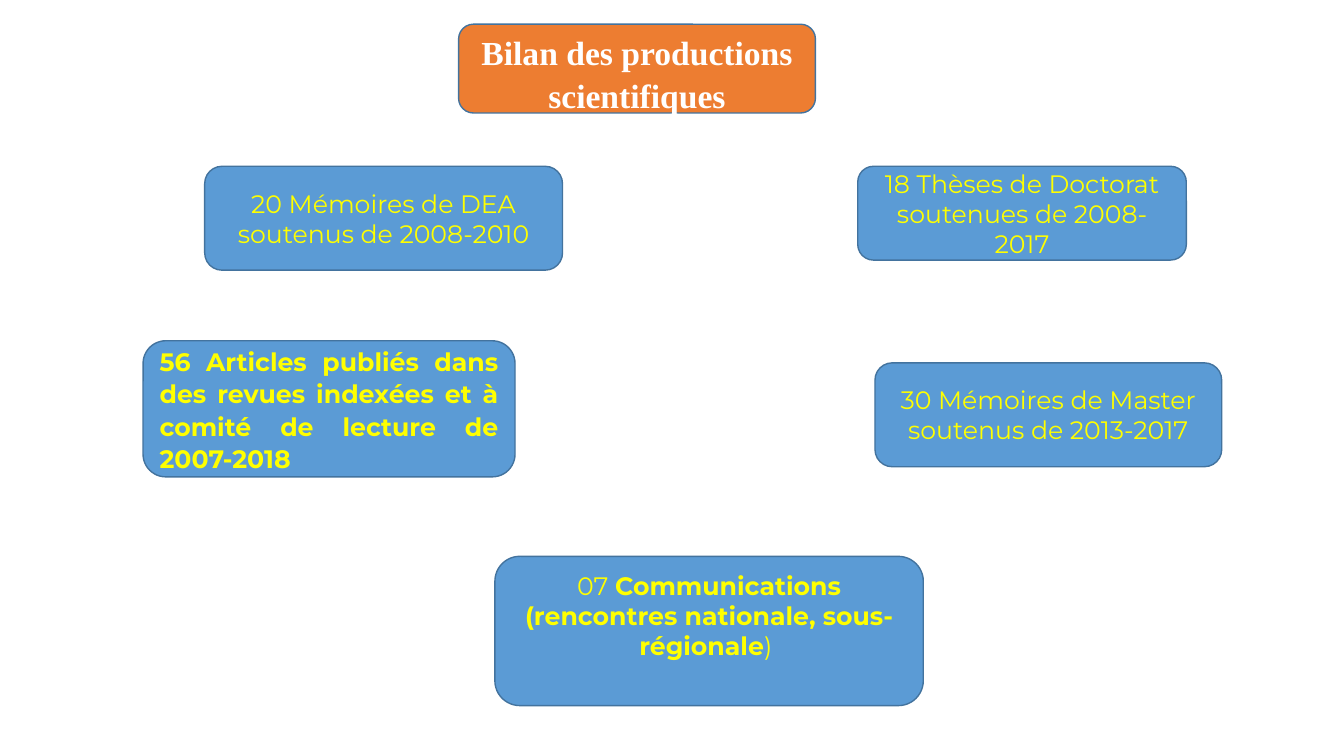
from pptx import Presentation
from pptx.dml.color import RGBColor
from pptx.enum.shapes import MSO_SHAPE
from pptx.enum.text import MSO_ANCHOR, PP_ALIGN
from pptx.util import Pt

BLUE = RGBColor(0x5B, 0x9B, 0xD5)
ORANGE = RGBColor(0xED, 0x7D, 0x31)
OUTLINE = RGBColor(0x43, 0x73, 0x9E)
YELLOW = RGBColor(0xFF, 0xFF, 0x00)
WHITE = RGBColor(0xFF, 0xFF, 0xFF)

# Box (left, top, width, height in points) and text runs (text, bold)
CENTRED_RESULTS = [
    ((146.2, 118.8, 255.6, 74.2),
     [("20 Mémoires de DEA soutenus de 2008-2010", False)]),
    ((625, 259.2, 247.7, 74.2),
     [("30 Mémoires de Master soutenus de 2013-2017", False)]),
    ((612.7, 118.8, 234.7, 67),
     [("18 Thèses de Doctorat soutenues de 2008-2017", False)]),
]
ARTICLES = [("56 Articles publiés dans des revues indexées et à comité "
             "de lecture de 2007-2018", True)]
COMMUNICATIONS = [("07 ", False),
                  ("Communications (rencontres nationale, sous-régionale", True),
                  (") ", False)]
TITLE = [("Bilan des productions scientifiques", True)]


def add_card(slide, box, runs, fill=BLUE, color=YELLOW, font="Montserrat",
             size=18, align=PP_ALIGN.CENTER):
    """Add a rounded box holding one paragraph and return its text frame."""
    s = slide.shapes.add_shape(MSO_SHAPE.ROUNDED_RECTANGLE, *map(Pt, box))
    s.shadow.inherit = False
    s.fill.solid()
    s.fill.fore_color.rgb = fill
    s.line.color.rgb = OUTLINE
    s.line.width = Pt(1)
    tf = s.text_frame
    tf.word_wrap = True
    tf.vertical_anchor = MSO_ANCHOR.MIDDLE
    p = tf.paragraphs[0]
    p.alignment = align
    for text, bold in runs:
        r = p.add_run()
        r.text = text
        r.font.name = font
        r.font.size = Pt(size)
        r.font.bold = bold
        r.font.color.rgb = color
    return tf


def add_title(slide, box):
    tf = add_card(slide, box, TITLE, ORANGE, WHITE, "Times New Roman", 24)
    tf.paragraphs[0].line_spacing = 1.07
    tf.margin_top = Pt(8.6)


def add_results(slide):
    tf = add_card(slide, (102.2, 243.4, 265.7, 97.2), ARTICLES,
                  align=PP_ALIGN.JUSTIFY)
    tf.paragraphs[0].line_spacing = 1.07
    for box, runs in CENTRED_RESULTS:
        add_card(slide, box, runs)
    tf = add_card(slide, (353.5, 397.4, 306, 106.6), COMMUNICATIONS)
    tf.margin_bottom = Pt(25.6)


def main():
    prs = Presentation()
    prs.slide_width, prs.slide_height = Pt(960), Pt(540)
    slide = prs.slides.add_slide(prs.slide_layouts[6])
    add_results(slide)
    add_title(slide, (327.6, 17.3, 254.9, 63.4))
    prs.save("out.pptx")


if __name__ == "__main__":
    main()
